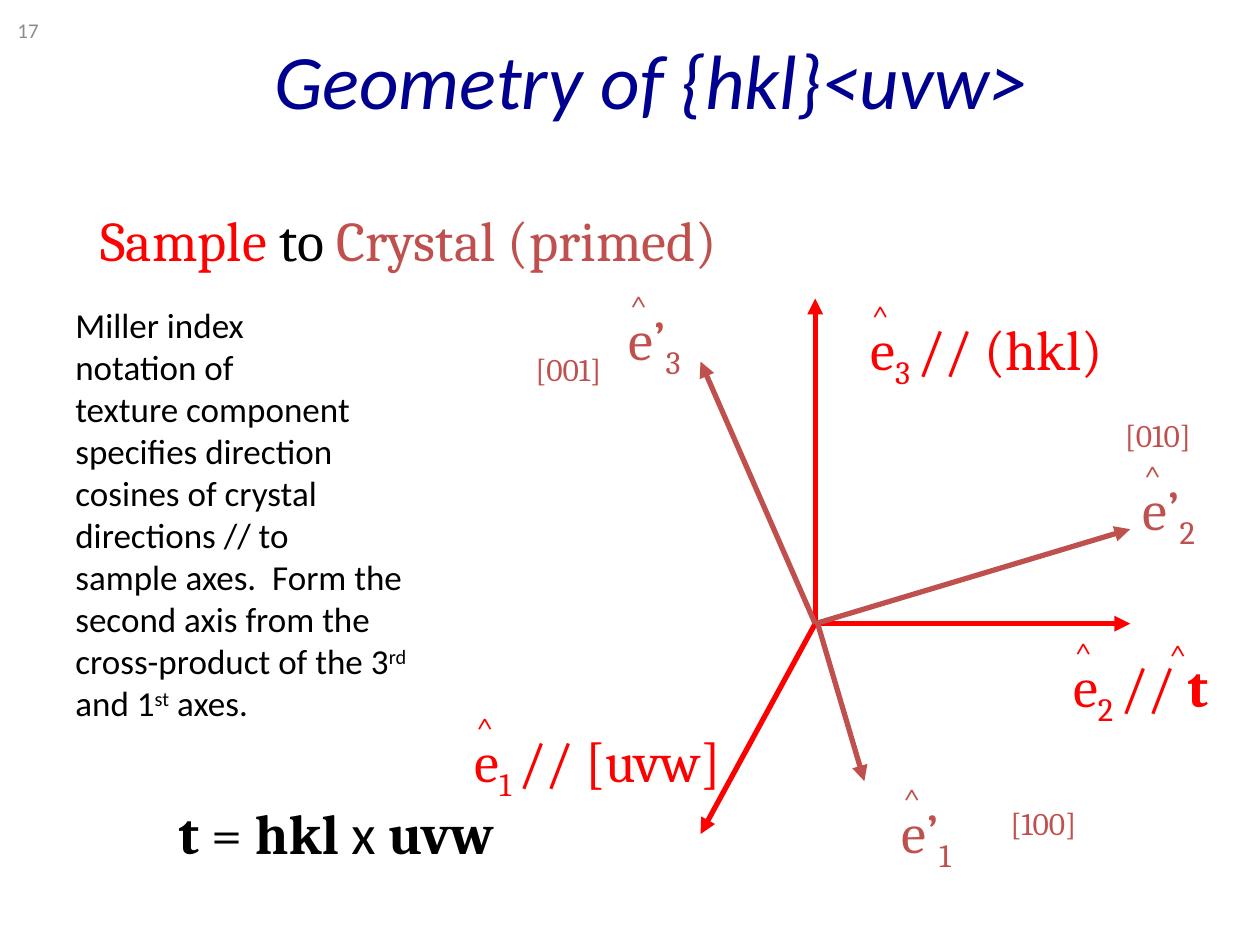
"""Build the slide that relates sample axes to primed crystal axes."""
from dataclasses import dataclass

from lxml.etree import SubElement
from pptx import Presentation
from pptx.dml.color import RGBColor
from pptx.enum.shapes import MSO_CONNECTOR
from pptx.enum.text import MSO_ANCHOR, MSO_AUTO_SIZE, PP_ALIGN
from pptx.oxml.ns import qn
from pptx.util import Inches, Pt

COLORS = {"sample": "FF0000", "crystal": "C0504D", "title": "000090",
          "text": "000000", "number": "8C8C8C"}
COLUMNS, ROWS = 100, 75
WIDTH, HEIGHT = Inches(10), Inches(7.5)
SUBSCRIPT, SUPERSCRIPT = -25, 30
ORIGIN = (64.7, 49.5)
HAT_OFFSET = (0.1, -1.4)
HAT_SIZE = (3.9, 5)
INDEX_SIZE = (10, 5)
PRIMED_SIZE = (6.9, 6.3)


@dataclass
class Span:
    text: str
    color: str = "text"
    bold: bool = False
    base: int = 0
    font: str = "Cambria"


@dataclass
class Label:
    place: tuple[float, float]
    size: tuple[float, float]
    spans: list[Span]
    points: int = 32
    wrap: bool = False


@dataclass
class Axis:
    tip: tuple[float, float]
    color: str
    label: Label
    start: tuple[float, float] = ORIGIN


def across(columns: float) -> int:
    return round(WIDTH * columns / COLUMNS)


def down(rows: float) -> int:
    return round(HEIGHT * rows / ROWS)


def format_run(run, span: Span, points: int) -> None:
    run.font.name = span.font
    run.font.size = Pt(points)
    run.font.bold = span.bold
    run.font.color.rgb = RGBColor.from_string(COLORS[span.color])
    if span.base:
        run.font._element.set("baseline", str(span.base * 1000))


def write_spans(para, spans: list[Span], points: int) -> None:
    first, *others = spans
    para.text = first.text
    for run in para.runs:
        format_run(run, first, points)
    for span in others:
        run = para.add_run()
        run.text = span.text
        format_run(run, span, points)


def draw_label(page, label: Label):
    box = page.shapes.add_textbox(across(label.place[0]), down(label.place[1]),
                                  across(label.size[0]), down(label.size[1]))
    frame = box.text_frame
    frame.word_wrap = label.wrap
    frame.auto_size = MSO_AUTO_SIZE.SHAPE_TO_FIT_TEXT
    write_spans(frame.paragraphs[0], label.spans, label.points)
    return box


def draw_hat(page, place: tuple[float, float], color: str) -> None:
    draw_label(page, Label(place, HAT_SIZE, [Span("^", color)], 18))


def draw_arrow(page, axis: Axis) -> None:
    arrow = page.shapes.add_connector(
        MSO_CONNECTOR.STRAIGHT, across(axis.start[0]), down(axis.start[1]),
        across(axis.tip[0]), down(axis.tip[1]))
    arrow.line.width = Pt(3)
    arrow.line.color.rgb = RGBColor.from_string(COLORS[axis.color])
    SubElement(arrow.line._get_or_add_ln(), qn("a:tailEnd"), type="triangle")
    SubElement(arrow._element.spPr, qn("a:effectLst"))


def sample_label(place: tuple[float, float], size: tuple[float, float],
                 number: int, *meaning: Span) -> Label:
    return Label(place, size, [Span("e", "sample"),
                               Span(f"{number} ", "sample", base=SUBSCRIPT), *meaning])


def crystal_label(place: tuple[float, float], number: int) -> Label:
    return Label(place, PRIMED_SIZE, [Span("e’", "crystal"),
                                      Span(str(number), "crystal", base=SUBSCRIPT)])


def draw_title(page) -> None:
    title = page.shapes.title
    title.left, title.top = across(9.2), 0
    title.width, title.height = across(85), down(12.5)
    frame = title.text_frame
    frame.vertical_anchor = MSO_ANCHOR.MIDDLE
    para = frame.paragraphs[0]
    para.alignment = PP_ALIGN.CENTER
    write_spans(para, [Span("Geometry of {hkl}<uvw>", "title", font="Calibri")], 44)
    para.runs[0].font.italic = True


def draw_number(page) -> None:
    box = draw_label(page, Label((0.4, 0.4), (7.8, 4),
                                 [Span("17", "number", font="Calibri")], 12, True))
    box.text_frame.auto_size = MSO_AUTO_SIZE.NONE
    box.text_frame.vertical_anchor = MSO_ANCHOR.MIDDLE


AXES = [
    Axis((64.7, 23.7), "sample", sample_label(
        (68.1, 24.5), (21.4, 6.4), 3, Span("// (hkl)", "sample"))),
    Axis((89.7, 49.5), "sample", sample_label(
        (84.2, 51.2), (13.7, 6.4), 2, Span("// ", "sample"),
        Span("t", "sample", bold=True))),
    Axis((55.6, 66.2), "sample", sample_label(
        (36.7, 57.2), (23.3, 6.4), 1, Span("// [uvw]", "sample"))),
    Axis((55.6, 28.7), "crystal", crystal_label((48.9, 23.7), 3)),
    Axis((89.7, 42), "crystal", crystal_label((89.7, 37.2), 2)),
    Axis((68.6, 62), "crystal", crystal_label((70.6, 62.8), 1), (64.9, 49.5)),
]

INDICES = {"[001]": (41.5, 27.3), "[010]": (88.3, 32.5), "[100]": (79.2, 63.3)}

NOTE = ("Miller index\nnotation of\ntexture component\nspecifies direction\n"
        "cosines of crystal\ndirections // to\nsample axes.  Form the second "
        "axis from the cross-product of the 3")

STATEMENTS = [
    Label((5, 23.6), (30, 34.7), [
        Span(NOTE, font="Calibri"),
        Span("rd", base=SUPERSCRIPT, font="Calibri"),
        Span(" and 1", font="Calibri"),
        Span("st", base=SUPERSCRIPT, font="Calibri"),
        Span(" axes.", font="Calibri")], 20, True),
    Label((7, 15.8), (53.9, 6.4), [
        Span("Sample ", "sample"), Span("to "), Span("Crystal (primed)", "crystal")]),
    Label((13.2, 62.9), (27.8, 6.4), [
        Span("t", bold=True), Span(" = "), Span("hkl ", bold=True),
        Span("x ", font="Calibri"), Span("uvw", bold=True)]),
]


def main() -> None:
    deck = Presentation()
    deck.slide_width, deck.slide_height = WIDTH, HEIGHT
    page = deck.slides.add_slide(deck.slide_layouts[5])
    draw_number(page)
    draw_title(page)
    for axis in AXES:
        draw_arrow(page, axis)
    for axis in AXES:
        draw_label(page, axis.label)
        left, top = axis.label.place
        draw_hat(page, (left + HAT_OFFSET[0], top + HAT_OFFSET[1]), axis.color)
    draw_hat(page, (91.8, 50), "sample")
    for text, place in INDICES.items():
        draw_label(page, Label(place, INDEX_SIZE, [Span(text, "crystal")], 18))
    for statement in STATEMENTS:
        draw_label(page, statement)
    deck.save("out.pptx")


if __name__ == "__main__":
    main()
